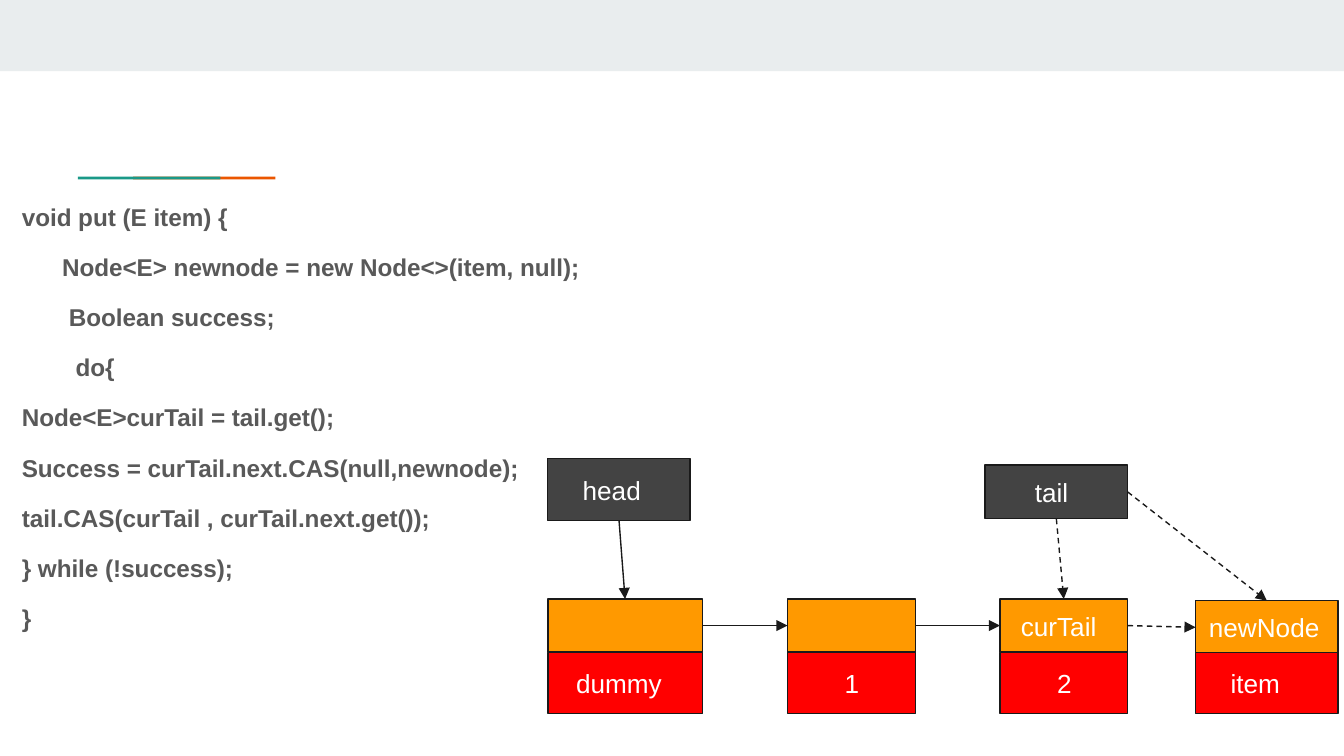
from pptx import Presentation
from pptx.dml.color import RGBColor as Color
from pptx.enum.dml import MSO_LINE as Dash
from pptx.enum.shapes import MSO_CONNECTOR as Link, MSO_SHAPE as Shape
from pptx.enum.text import MSO_ANCHOR as Anchor, PP_ALIGN as Align
from pptx.oxml.ns import qn
from pptx.util import Inches, Pt
from lxml.etree import SubElement
from dataclasses import dataclass


@dataclass(frozen=True)
class Theme:
    font: str = "Arial"
    band: str = "E9EDEE"
    orange: str = "EB5600"
    teal: str = "1A9988"
    code: str = "595959"
    pointer: str = "434343"
    link: str = "FF9900"
    value: str = "FF0000"
    outline: str = "1A1A1A"
    label: str = "FFFFFF"
    code_size: float = 13
    label_size: float = 14
    line_width: float = 0.75


theme = Theme()
deck = Presentation()
deck.slide_width = Inches(10)
deck.slide_height = deck.slide_width * 9 // 16
page = deck.slides.add_slide(deck.slide_layouts[6])
column = deck.slide_width / 100
row = deck.slide_height / 56.25
inset = column


def add_box(left, top, width, height, fill, text="", indent=0, outlined=True):
    box = page.shapes.add_shape(Shape.RECTANGLE, int(left * column), int(top * row),
                                int(width * column), int(height * row))
    box.shadow.inherit = False
    box.fill.solid()
    box.fill.fore_color.rgb = Color.from_string(fill)
    if outlined:
        box.line.color.rgb = Color.from_string(theme.outline)
        box.line.width = Pt(theme.line_width)
    else:
        box.line.fill.background()
    if text:
        frame = box.text_frame
        frame.text = text
        frame.word_wrap = True
        frame.vertical_anchor = Anchor.MIDDLE
        frame.margin_left = int(inset + indent * column)
        frame.margin_top = frame.margin_right = frame.margin_bottom = int(inset)
        para = frame.paragraphs[0]
        para.alignment = Align.LEFT
        font = para.runs[0].font
        font.name, font.size = theme.font, Pt(theme.label_size)
        font.color.rgb = Color.from_string(theme.label)
    return box


def add_arrow(start, start_side, end, end_side, dashed):
    arrow = page.shapes.add_connector(Link.STRAIGHT, 0, 0, 0, 0)
    arrow.begin_connect(start, start_side)
    arrow.end_connect(end, end_side)
    arrow.line.color.rgb = Color.from_string(theme.outline)
    arrow.line.width = Pt(theme.line_width)
    if dashed:
        arrow.line.dash_style = Dash.DASH
    properties = arrow._element.spPr
    SubElement(properties.find(qn("a:ln")), qn("a:tailEnd"), type="triangle")
    SubElement(properties, qn("a:effectLst"))


add_box(0, 0, 100, 5.3, theme.band, outlined=False)
for left, fill in ((9.9, theme.orange), (5.8, theme.teal)):
    add_box(left, 13.15, 10.6, 0.2, fill, outlined=False)

code_lines = (
    ("void put (E item) {", 0),
    ("Node<E> newnode = new Node<>(item, null);", 3),
    ("Boolean success;", 3.5),
    ("do{", 4),
    ("Node<E>curTail = tail.get();", 0),
    ("Success = curTail.next.CAS(null,newnode);", 0),
    ("tail.CAS(curTail , curTail.next.get());", 0),
    ("} while (!success);", 0),
    ("}", 0),
)
code = page.shapes.add_textbox(int(0.64 * column), int(14.23 * row),
                               int(103.3 * column), int(44.4 * row))
frame = code.text_frame
frame.text = "\n".join(text for text, indent in code_lines)
frame.word_wrap = True
frame.margin_left = frame.margin_top = frame.margin_right = frame.margin_bottom = int(inset)
for index, (para, (text, indent)) in enumerate(zip(frame.paragraphs, code_lines)):
    para.line_spacing = 0.95
    para.space_before = Pt(12 if index else 0)
    para._p.get_or_add_pPr().set("marL", str(int(indent * column)))
    font = para.runs[0].font
    font.name, font.size, font.bold = theme.font, Pt(theme.code_size), True
    font.color.rgb = Color.from_string(theme.code)
frame.paragraphs[-1].space_after = Pt(12)

head = add_box(40.76, 34.13, 10.6, 4.6, theme.pointer, "head", 1.6)
tail = add_box(73.3, 34.6, 10.6, 4, theme.pointer, "tail", 2.7)

nodes = []
for left, top, width, name, name_indent, value, value_indent in (
    (40.76, 44.57, 11.5, "", 0, "dummy", 1.1),
    (58.6, 44.57, 9.5, "", 0, "1", 3.25),
    (74.4, 44.57, 9.5, "curTail", 0.55, "2", 3.25),
    (88.96, 44.7, 10.6, "newNode", 0, "item", 1.6),
):
    nodes.append(add_box(left, top, width, 3.96, theme.link, name, name_indent))
    add_box(left, 48.53, width, 4.57, theme.value, value, value_indent)

add_arrow(head, 2, nodes[0], 0, False)
for start, end in zip(nodes, nodes[1:]):
    add_arrow(start, 3, end, 1, end is nodes[-1])
add_arrow(tail, 2, nodes[2], 0, True)
add_arrow(tail, 3, nodes[3], 0, True)

deck.save("out.pptx")
